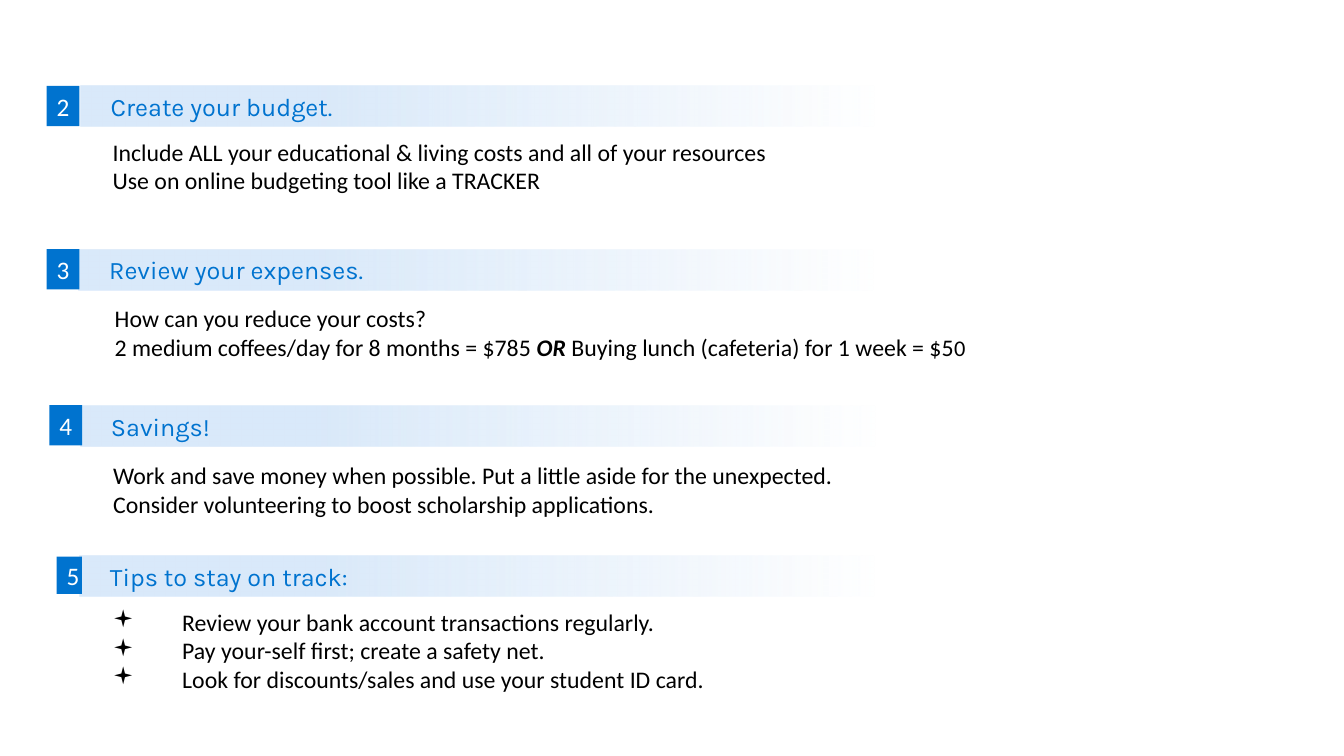
from lxml import etree
from pptx import Presentation
from pptx.dml.color import RGBColor
from pptx.enum.shapes import MSO_SHAPE
from pptx.enum.text import MSO_ANCHOR, PP_ALIGN
from pptx.oxml.ns import qn
from pptx.util import Pt

RECTANGLE = MSO_SHAPE.RECTANGLE
MIDDLE, CENTER, LEFT = MSO_ANCHOR.MIDDLE, PP_ALIGN.CENTER, PP_ALIGN.LEFT

# Content: each body line is a list of (text, format changes) spans
SECTIONS = [
    {"number": "2", "heading": "Create your budget.", "bullets": False, "lines": [
        [("Include ALL your educational & living costs and all of your resources", {})],
        [("Use on online budgeting tool like a TRACKER", {})]]},
    {"number": "3", "heading": "Review your expenses.", "bullets": False, "lines": [
        [("How can you reduce your costs?", {})],
        [("2 medium coffees/day for 8 months = $785 ", {}),
         ("OR", {"bold": True, "italic": True}),
         (" Buying lunch (cafeteria) for 1 week = $5", {}),
         ("0", {"size": Pt(16)})]]},
    {"number": "4", "heading": "Savings!", "bullets": False, "lines": [
        [("Work and save money when possible. Put a little aside for the unexpected.", {})],
        [("Consider volunteering to boost scholarship applications.", {})]]},
    {"number": "5", "heading": "Tips to stay on track:", "bullets": True, "lines": [
        [("Review your bank account transactions regularly.", {})],
        [("Pay your-self first; create a safety net.", {})],
        [("Look for discounts/sales and use your student ID card.", {})]]},
]

# Places in points: bar (left, top), badge (left, top, width, height), body (left, top, width)
PLACES = [
    {"bar": (57.6, 61.2), "badge": (33.4, 61.4, 23.4, 28.8), "body": (73.4, 94.6, 695.5)},
    {"bar": (56.5, 178), "badge": (33.4, 177.9, 23.4, 28.8), "body": (74.9, 213.5, 708.5)},
    {"bar": (57.8, 289.8), "badge": (35.3, 289.4, 23.4, 28.8), "body": (73.7, 325.8, 561)},
    {"bar": (57.1, 396.9), "badge": (40.5, 397.7, 18, 26.6), "body": (73.4, 430.4, 623.5)},
]
BAR_WIDTH, BAR_HEIGHT = 568, 29.2
BAR_INDENT, BULLET_INDENT = 14.4, 49.7
LINE_HEIGHT, BODY_PADDING = 20.75, 7.2


class Theme:
    blue = RGBColor.from_string("0073CF")
    pale = RGBColor.from_string("CFE3F8")
    white = RGBColor.from_string("FFFFFF")
    black = RGBColor.from_string("000000")
    bar_stops = ((0.3, 77000), (1.0, 0))  # position, opacity
    heading = {"name": "Karla", "size": Pt(18)}
    badge = {"name": "Calibri", "size": Pt(18)}
    body = {"name": "Calibri", "size": Pt(17)}
    bullet = "Wingdings"


def add_span(para, text, color, formats):
    span = para.add_run()
    span.text = text
    span.font.color.rgb = color
    for name, value in formats.items():
        setattr(span.font, name, value)


def add_rectangle(page, place):
    box = page.shapes.add_shape(RECTANGLE, *map(Pt, place))
    box.shadow.inherit = False
    box.line.fill.background()
    box.text_frame.vertical_anchor = MIDDLE
    return box


def add_bar(page, place, heading):
    bar = add_rectangle(page, (*place, BAR_WIDTH, BAR_HEIGHT))
    bar.fill.gradient()
    bar.fill.gradient_angle = 0
    for stop, (position, _) in zip(bar.fill.gradient_stops, Theme.bar_stops):
        stop.position = position
        stop.color.rgb = Theme.pale
    # Fade to clear
    colors = bar._element.spPr.iter(qn("a:srgbClr"))
    for color, (_, opacity) in zip(list(colors), Theme.bar_stops):
        etree.SubElement(color, qn("a:alpha"), val=str(opacity))
    para = bar.text_frame.paragraphs[0]
    para.alignment = LEFT
    para._p.get_or_add_pPr().set("marL", str(Pt(BAR_INDENT)))
    add_span(para, heading, Theme.blue, Theme.heading)


def add_badge(page, place, number):
    badge = add_rectangle(page, place)
    badge.fill.solid()
    badge.fill.fore_color.rgb = Theme.blue
    para = badge.text_frame.paragraphs[0]
    para.alignment = CENTER
    add_span(para, number, Theme.white, Theme.badge)


def add_body(page, place, lines, bullets):
    height = len(lines) * LINE_HEIGHT + BODY_PADDING
    frame = page.shapes.add_textbox(*map(Pt, (*place, height))).text_frame
    frame.word_wrap = True
    for index, spans in enumerate(lines):
        para = frame.add_paragraph() if index else frame.paragraphs[0]
        if bullets:
            properties = para._p.get_or_add_pPr()
            properties.set("marL", str(Pt(BULLET_INDENT)))
            properties.set("indent", str(-Pt(BULLET_INDENT)))
            etree.SubElement(properties, qn("a:buFont"), typeface=Theme.bullet)
            etree.SubElement(properties, qn("a:buChar"), char="▪")
        for text, changes in spans:
            add_span(para, text, Theme.black, {**Theme.body, **changes})


def main():
    deck = Presentation()
    deck.slide_width, deck.slide_height = Pt(960), Pt(540)
    page = deck.slides.add_slide(deck.slide_layouts[6])
    for section, place in zip(SECTIONS, PLACES):
        add_bar(page, place["bar"], section["heading"])
        add_body(page, place["body"], section["lines"], section["bullets"])
        add_badge(page, place["badge"], section["number"])
    deck.save("out.pptx")


if __name__ == "__main__":
    main()
